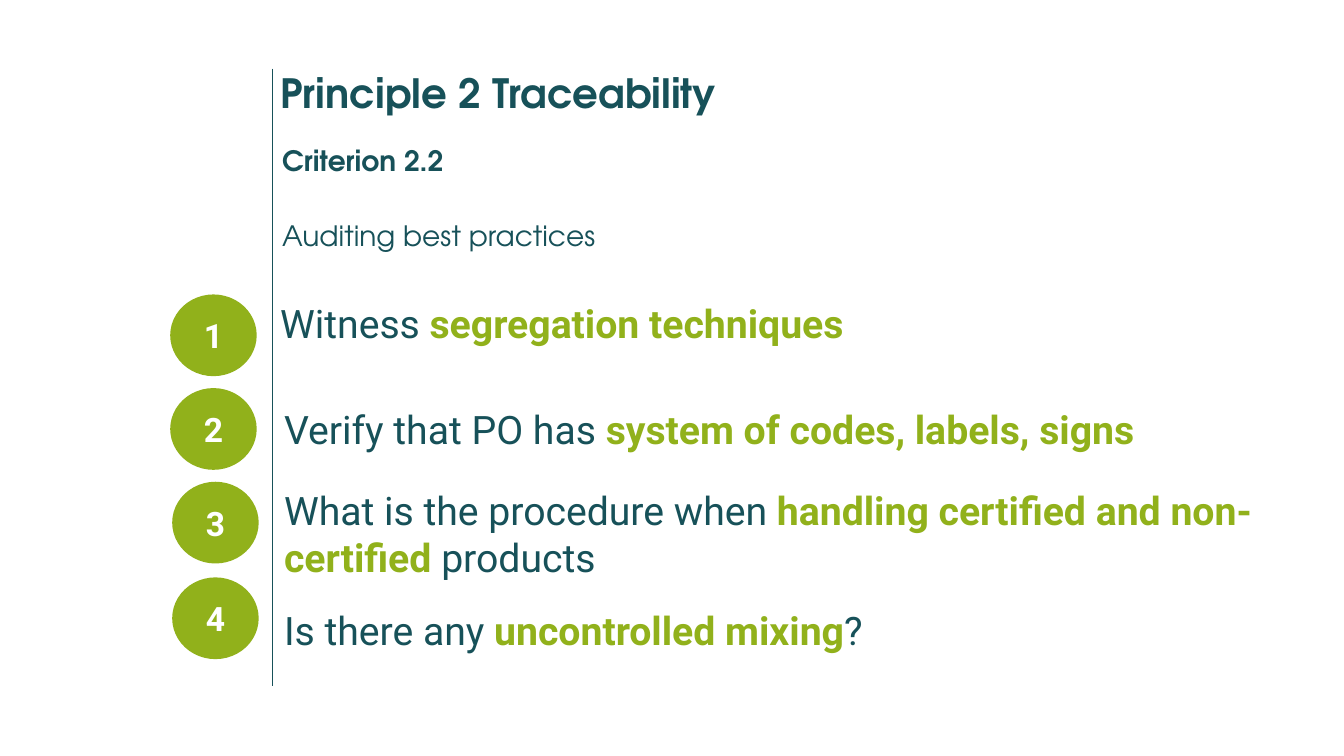
from dataclasses import dataclass
from typing import NamedTuple

from lxml.etree import SubElement
from pptx import Presentation
from pptx.dml.color import RGBColor
from pptx.enum.shapes import MSO_CONNECTOR, MSO_SHAPE
from pptx.enum.text import MSO_ANCHOR, MSO_AUTO_SIZE, PP_ALIGN
from pptx.oxml.ns import qn
from pptx.util import Cm, Pt


@dataclass(frozen=True)
class Theme:
    teal: RGBColor = RGBColor(0x17, 0x51, 0x59)
    green: RGBColor = RGBColor(0x91, 0xB1, 0x1B)
    white: RGBColor = RGBColor(0xFF, 0xFF, 0xFF)
    heading_font: str = "TeX Gyre Adventor"
    body_font: str = "Roboto"
    title_size: float = 28.8
    subtitle_size: float = 20
    item_size: float = 28
    badge_size: float = 24


THEME = Theme()


class Box(NamedTuple):
    """A region of the slide, in centimetres."""
    left: float
    top: float
    width: float
    height: float

    def lengths(self):
        return [Cm(value) for value in self]


# Each practice: badge left and top, text left, top, width and height, then
# spans of text with a flag for emphasis. Offsets are from the list region.
PRACTICES = [
    (Box(0, 0, 2.18, 2.06), Box(2.52, 0, 19.56, 1.45),
     [("Witness ", False), ("segregation techniques", True)]),
    (Box(0, 2.36, 2.18, 2.06), Box(2.62, 2.66, 26.95, 1.45),
     [("Verify that PO has ", False), ("system of codes, labels, signs", True)]),
    (Box(0.05, 4.72, 2.18, 2.06), Box(2.62, 4.72, 26.64, 2.64),
     [("What is the procedure when ", False),
      ("handling certified and non-certified ", True), ("products", False)]),
    (Box(0.05, 7.13, 2.18, 2.06), Box(2.62, 7.74, 22.99, 1.45),
     [("Is there any ", False), ("uncontrolled mixing", True), ("?", False)]),
]


def add_span(para, text, *, font, size, color=THEME.teal, bold=False):
    span = para.add_run()
    span.text = text
    span.font.name = font
    span.font.size = Pt(size)
    span.font.bold = bold
    span.font.color.rgb = color


def prepare_frame(shape, anchor=MSO_ANCHOR.TOP):
    frame = shape.text_frame
    frame.word_wrap = True
    frame.auto_size = MSO_AUTO_SIZE.NONE
    frame.vertical_anchor = anchor
    return frame


def inside(region, part):
    return Box(region.left + part.left, region.top + part.top, part.width, part.height)


def add_rule(page, box):
    """Draw the vertical line down the left edge of the box."""
    left, top, _, height = box.lengths()
    rule = page.shapes.add_connector(MSO_CONNECTOR.STRAIGHT, left, top, left, top + height)
    rule.line.color.rgb = THEME.teal
    rule.line.width = Pt(0.5)
    SubElement(rule._element.spPr, qn("a:effectLst"))


def add_title(page, box, text):
    title = page.shapes.title
    title.left, title.top, title.width, title.height = box.lengths()
    para = prepare_frame(title).paragraphs[0]
    para.alignment = PP_ALIGN.LEFT
    add_span(para, text, font=THEME.heading_font, size=THEME.title_size, bold=True)


def add_subtitles(page, box, criterion, topic):
    frame = prepare_frame(page.shapes.add_textbox(*box.lengths()))
    first, second = frame.paragraphs[0], frame.add_paragraph()
    first.space_after = Pt(12)
    second.space_before = Pt(18)
    for para, text, bold in ((first, criterion, True), (second, topic, False)):
        add_span(para, text, font=THEME.heading_font, size=THEME.subtitle_size, bold=bold)


def add_badge(page, box, number):
    badge = page.shapes.add_shape(MSO_SHAPE.OVAL, *box.lengths())
    badge.shadow.inherit = False
    badge.fill.solid()
    badge.fill.fore_color.rgb = THEME.green
    badge.line.fill.background()
    para = prepare_frame(badge, MSO_ANCHOR.MIDDLE).paragraphs[0]
    para.alignment = PP_ALIGN.CENTER
    add_span(para, str(number), font=THEME.body_font, size=THEME.badge_size,
             color=THEME.white, bold=True)


def add_practice_text(page, box, spans):
    para = prepare_frame(page.shapes.add_textbox(*box.lengths())).paragraphs[0]
    for text, emphasis in spans:
        add_span(para, text, font=THEME.body_font, size=THEME.item_size,
                 color=THEME.green if emphasis else THEME.teal, bold=emphasis)


def add_practices(page, region, practices):
    for number, (badge, label, spans) in enumerate(practices, start=1):
        add_badge(page, inside(region, badge), number)
        add_practice_text(page, inside(region, label), spans)


def main():
    deck = Presentation()
    deck.slide_width, deck.slide_height = Cm(33.87), Cm(19.05)
    page = deck.slides.add_slide(deck.slide_layouts.get_by_name("Title Only"))
    add_rule(page, Box(6.86, 1.73, 0, 15.56))
    add_title(page, Box(6.81, 1.6, 25.58, 1.04), "Principle 2 Traceability")
    add_subtitles(page, Box(6.86, 3.48, 24.71, 3.2), "Criterion 2.2", "Auditing best practices")
    add_practices(page, Box(4.29, 7.42, 29.57, 9.19), PRACTICES)
    deck.save("out.pptx")


if __name__ == "__main__":
    main()
